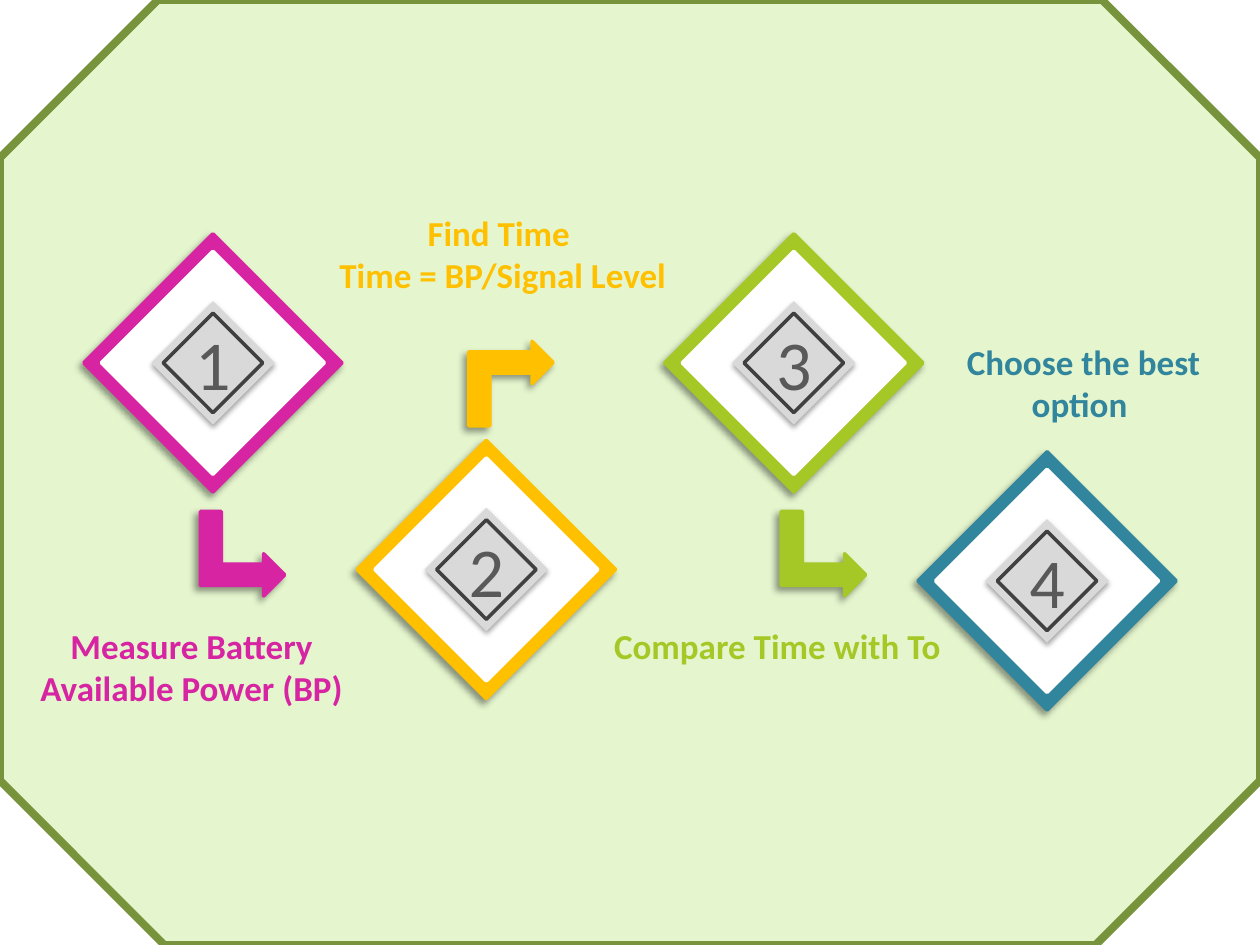
from lxml.etree import SubElement
from pptx import Presentation
from pptx.dml.color import RGBColor
from pptx.enum.shapes import MSO_SHAPE
from pptx.enum.text import MSO_ANCHOR, MSO_AUTO_SIZE, PP_ALIGN
from pptx.oxml.ns import qn
from pptx.util import Inches, Pt

MAGENTA, AMBER, LIME, TEAL = "D624A3", "FFC000", "A5C826", "31859C"


def color(hex_code):
    return RGBColor.from_string(hex_code)


class StepSlide:
    font = "Calibri"
    deep_shadow = (40, 4, 3, 135)
    soft_shadow = (35, 3.1, 1.8, 90)

    def __init__(self, slide):
        self.slide = slide

    def decorate(self, shape, fill=None, line=None, width=2, shadow=None):
        shape.shadow.inherit = False
        if fill:
            shape.fill.solid()
            shape.fill.fore_color.rgb = color(fill)
        else:
            shape.fill.background()
        if line:
            shape.line.color.rgb = color(line)
            shape.line.width = Pt(width)
            SubElement(shape.element.spPr.find(qn("a:ln")), qn("a:round"))
        else:
            shape.line.fill.background()
        if shadow:
            self.cast_shadow(shape, *shadow)

    def cast_shadow(self, shape, opacity, blur, distance, angle):
        effects = shape.element.spPr.find(qn("a:effectLst"))
        outer = SubElement(effects, qn("a:outerShdw"), blurRad=str(Pt(blur)),
                           dist=str(Pt(distance)), dir=str(angle * 60000),
                           algn="ctr", rotWithShape="0")
        black = SubElement(outer, qn("a:srgbClr"), val="000000")
        SubElement(black, qn("a:alpha"), val=str(opacity * 1000))

    def label(self, shape, text, size, hex_code, bold=False):
        frame = shape.text_frame
        frame.text = text
        for paragraph in frame.paragraphs:
            paragraph.alignment = PP_ALIGN.CENTER
            for run in paragraph.runs:
                run.font.name = self.font
                run.font.size = Pt(size)
                run.font.bold = bold
                run.font.color.rgb = color(hex_code)

    def backdrop(self, width, height):
        frame = self.slide.shapes.add_shape(
            MSO_SHAPE.SNIP_2_SAME_RECTANGLE, 0, 0, width, height)
        frame.adjustments[0] = 0.167
        frame.adjustments[1] = 0.174
        self.decorate(frame, "E5F6CE", "77933C", 4.5)

    def diamond(self, group, center, size, **style):
        left, top = (Inches(middle - size / 2) for middle in center)
        shape = group.shapes.add_shape(
            MSO_SHAPE.DIAMOND, left, top, Inches(size), Inches(size))
        self.decorate(shape, **style)
        return shape

    def badge(self, number, center, accent):
        group = self.slide.shapes.add_group_shape()
        self.diamond(group, center, 2.05, fill=accent, line=accent,
                     shadow=self.deep_shadow)
        self.diamond(group, center, 1.77, fill="FFFFFF", line="FFFFFF")
        plate = self.diamond(group, center, 0.98, fill="D9D9D9",
                             shadow=self.soft_shadow)
        self.label(plate, number, 40, "595959")
        frame = plate.text_frame
        frame.word_wrap = False
        frame.vertical_anchor = MSO_ANCHOR.MIDDLE
        frame.margin_left = frame.margin_right = 0
        frame.margin_top = frame.margin_bottom = 0
        self.diamond(group, center, 0.79, line="404040")

    def arrow(self, left, top, accent, upward):
        shape = self.slide.shapes.add_shape(
            MSO_SHAPE.BENT_UP_ARROW, Inches(left), Inches(top),
            Inches(0.67), Inches(0.67))
        shape.rotation = 90
        if upward:
            shape.rotation = 270
            shape.element.spPr.find(qn("a:xfrm")).set("flipV", "1")
        self.decorate(shape, accent, accent, shadow=self.deep_shadow)

    def caption(self, text, left, top, width, height, accent):
        box = self.slide.shapes.add_textbox(
            Inches(left), Inches(top), Inches(width), Inches(height))
        box.text_frame.word_wrap = True
        box.text_frame.auto_size = MSO_AUTO_SIZE.SHAPE_TO_FIT_TEXT
        self.label(box, text, 20, accent, bold=True)


def main():
    deck = Presentation()
    deck.slide_width, deck.slide_height = Inches(10), Inches(7.5)
    steps = StepSlide(deck.slides.add_slide(deck.slide_layouts[6]))
    steps.backdrop(deck.slide_width, deck.slide_height)

    badges = [((1.69, 2.88), MAGENTA), ((3.86, 4.52), AMBER),
              ((6.3, 2.88), LIME), ((8.31, 4.61), TEAL)]
    for number, (center, accent) in enumerate(badges, 1):
        steps.badge(str(number), center, accent)

    for left, top, accent, upward in [(1.59, 4.06, MAGENTA, False),
                                      (3.72, 2.71, AMBER, True),
                                      (6.2, 4.06, LIME, False)]:
        steps.arrow(left, top, accent, upward)

    captions = [
        ("Measure Battery Available Power (BP)", 0.2, 4.91, 2.64, 0.77, MAGENTA),
        ("Find Time \vTime = BP/Signal Level", 2.57, 1.63, 2.84, 0.77, AMBER),
        ("Compare Time with To", 4.75, 4.91, 2.84, 0.44, LIME),
        ("Choose the best option ", 7.18, 2.65, 2.84, 0.77, TEAL),
    ]
    for caption in captions:
        steps.caption(*caption)

    deck.save("out.pptx")


if __name__ == "__main__":
    main()
